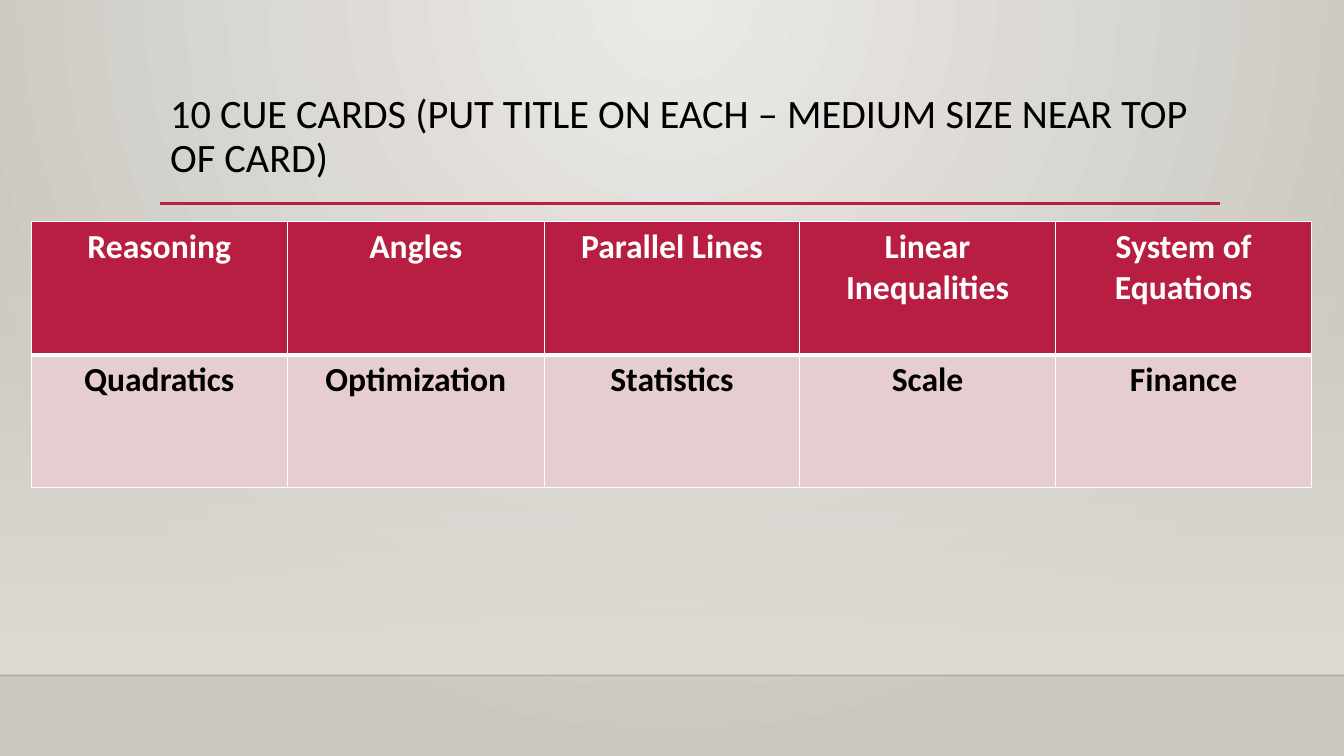
from dataclasses import dataclass

from pptx import Presentation
from pptx.dml.color import RGBColor
from pptx.enum.shapes import MSO_CONNECTOR, MSO_SHAPE
from pptx.enum.text import MSO_ANCHOR, PP_ALIGN
from pptx.oxml import parse_xml
from pptx.oxml.ns import nsdecls, qn
from pptx.oxml.xmlchemy import OxmlElement
from pptx.util import Inches, Pt


@dataclass(frozen=True)
class Theme:
    font: str = "Calibri"
    title_size: float = 28.8
    cell_size: float = 24
    black: str = "000000"
    white: str = "FFFFFF"
    red: str = "B71E42"
    pink: str = "E6CDCF"
    wall_light: str = "ECEAE7"
    wall_dark: str = "CAC7C1"
    haze: str = "DFDBD5"


THEME = Theme()
TITLE = "10 CUE CARDS (PUT TITLE ON EACH – MEDIUM SIZE NEAR TOP OF CARD)"
CARDS = [
    ["Reasoning", "Angles", "Parallel Lines", "Linear Inequalities", "System of Equations"],
    ["Quadratics", "Optimization", "Statistics", "Scale", "Finance"],
]
COLUMN_WIDTHS = [2.54, 2.55, 2.53, 2.54, 2.54]
ROW_HEIGHT = 1.32


def set_gradient(owner, start, end, shading, start_alpha=100):
    """Replace the solid fill inside owner with a two-stop gradient."""
    gradient = parse_xml(
        f'<a:gradFill {nsdecls("a")} rotWithShape="1"><a:gsLst>'
        f'<a:gs pos="0"><a:srgbClr val="{start}"><a:alpha val="{start_alpha * 1000}"/></a:srgbClr></a:gs>'
        f'<a:gs pos="100000"><a:srgbClr val="{end}"/></a:gs>'
        f"</a:gsLst>{shading}</a:gradFill>"
    )
    solid = owner.find(qn("a:solidFill"))
    owner.replace(solid, gradient)


def paint_background(page):
    page.background.fill.solid()
    set_gradient(
        page.element.find(".//" + qn("p:bgPr")), THEME.wall_light, THEME.wall_dark,
        '<a:path path="circle"><a:fillToRect l="43000" r="43000" b="100000"/></a:path>',
    )


def add_haze(page):
    haze = page.shapes.add_shape(
        MSO_SHAPE.RECTANGLE, 0, Inches(2.21), Inches(13.33), Inches(4.49))
    haze.shadow.inherit = False
    haze.line.fill.background()
    haze.fill.solid()
    set_gradient(haze.element.spPr, THEME.haze, THEME.haze,
                 '<a:lin ang="5400000" scaled="0"/>', start_alpha=0)


def add_rule(page, left, right, top, color, width, alpha=100):
    rule = page.shapes.add_connector(
        MSO_CONNECTOR.STRAIGHT, Inches(left), Inches(top), Inches(right), Inches(top))
    rule.line.color.rgb = RGBColor.from_string(color)
    rule.line.width = Pt(width)
    if alpha < 100:
        opacity = OxmlElement("a:alpha")
        opacity.set("val", str(alpha * 1000))
        rule.element.spPr.find(".//" + qn("a:srgbClr")).append(opacity)
    rule.element.spPr.append(OxmlElement("a:effectLst"))


def add_span(para, text, size, color, bold=False):
    span = para.add_run()
    span.text = text
    span.font.name = THEME.font
    span.font.size = Pt(size)
    span.font.bold = bold
    span.font.color.rgb = RGBColor.from_string(color)


def add_title(page):
    box = page.shapes.add_textbox(Inches(1.59), Inches(0.88), Inches(10.5), Inches(1.15))
    frame = box.text_frame
    frame.word_wrap = True
    frame.vertical_anchor = MSO_ANCHOR.TOP
    para = frame.paragraphs[0]
    para.line_spacing = 0.9
    add_span(para, TITLE, THEME.title_size, THEME.black)


def set_borders(cell, bottom_width):
    properties = cell._tc.get_or_add_tcPr()
    widths = {"lnL": 1, "lnR": 1, "lnT": 1, "lnB": bottom_width}
    for position, (side, width) in enumerate(widths.items()):
        properties.insert(position, parse_xml(
            f'<a:{side} {nsdecls("a")} w="{Pt(width)}"><a:solidFill>'
            f'<a:srgbClr val="{THEME.white}"/></a:solidFill></a:{side}>'))


def fill_cell(cell, text, is_header):
    cell.fill.solid()
    cell.fill.fore_color.rgb = RGBColor.from_string(THEME.red if is_header else THEME.pink)
    para = cell.text_frame.paragraphs[0]
    para.alignment = PP_ALIGN.CENTER
    add_span(para, text, THEME.cell_size, THEME.white if is_header else THEME.black, bold=True)


def add_cards(page):
    table = page.shapes.add_table(
        len(CARDS), len(COLUMN_WIDTHS), Inches(0.31), Inches(2.2),
        Inches(sum(COLUMN_WIDTHS)), Inches(ROW_HEIGHT * len(CARDS))).table
    for column, width in zip(table.columns, COLUMN_WIDTHS):
        column.width = Inches(width)
    for row_index, titles in enumerate(CARDS):
        is_header = row_index == 0
        for column_index, title in enumerate(titles):
            cell = table.cell(row_index, column_index)
            fill_cell(cell, title, is_header)
            set_borders(cell, bottom_width=3 if is_header else 1)
            if not is_header:
                cell._tc.tcPr.find(qn("a:lnT")).set("w", str(Pt(3)))


def main():
    deck = Presentation()
    deck.slide_width, deck.slide_height = Inches(13.33), Inches(7.5)
    page = deck.slides.add_slide(deck.slide_layouts[6])
    paint_background(page)
    add_haze(page)
    add_rule(page, 0, 13.33, 6.7, THEME.black, width=1, alpha=20)
    add_rule(page, 1.59, 12.1, 2.02, THEME.red, width=2.5)
    add_title(page)
    add_cards(page)
    deck.save("out.pptx")


if __name__ == "__main__":
    main()
